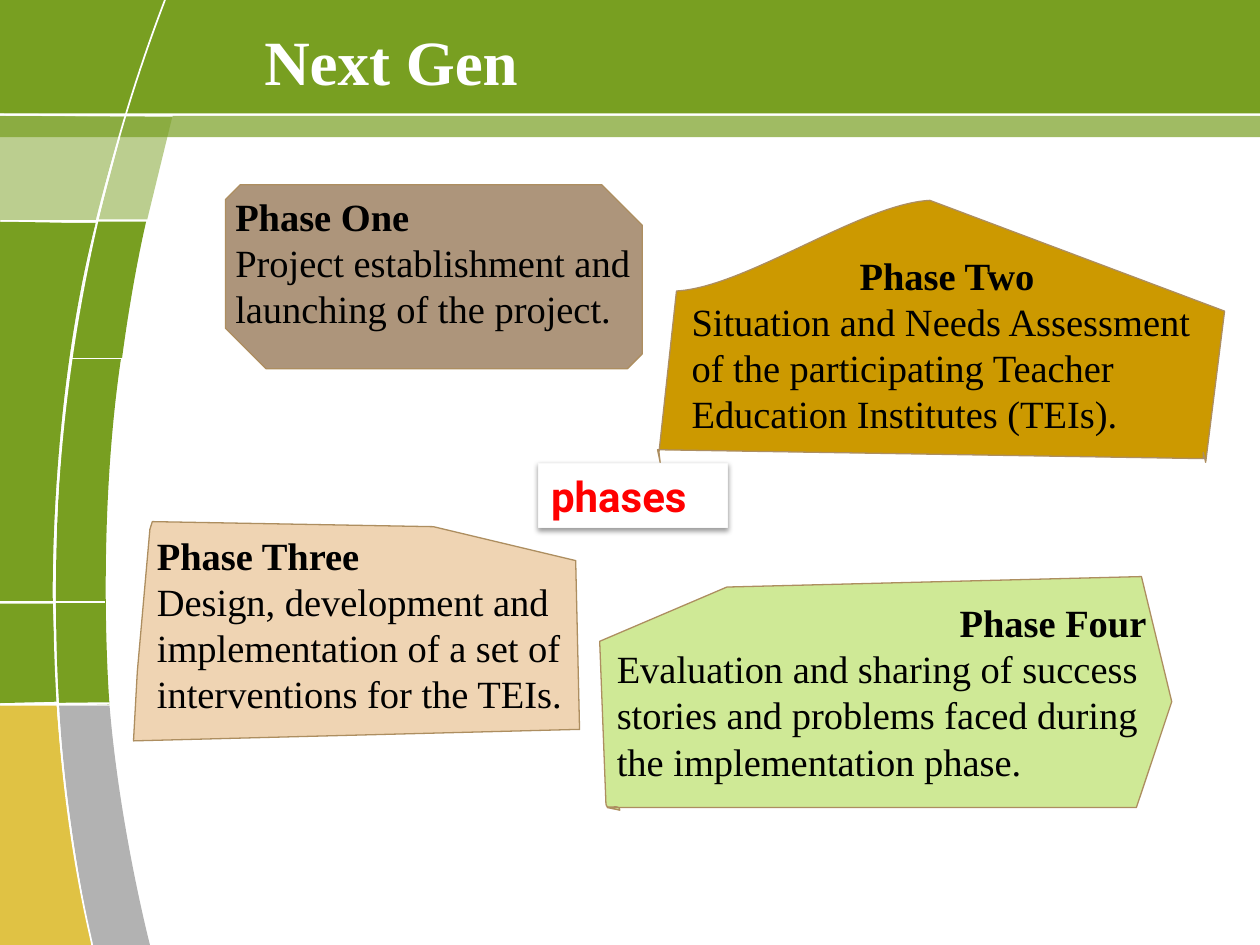
"""Build the "Next Gen" slide with its four project phases."""
from lxml.etree import SubElement
from pptx import Presentation
from pptx.dml.color import RGBColor
from pptx.enum.shapes import MSO_CONNECTOR, MSO_SHAPE
from pptx.enum.text import MSO_ANCHOR, MSO_AUTO_SIZE, PP_ALIGN
from pptx.oxml.ns import qn
from pptx.util import Pt

HUES = {
    "green": "789F21", "gold": "E0C244", "grey": "B2B2B2", "white": "FFFFFF",
    "brown": "AD957B", "amber": "CC9900", "sand": "EFD4B3", "lime": "CFE996",
    "edge": "AD8E60", "pale": "F9F9F9", "red": "FF0000", "black": "000000",
}
SERIF = "Times New Roman"


def paint(shape, fill=None, line=None, width=0.75, alpha=100):
    """Set fill, opacity and outline, without a shadow."""
    shape.shadow.inherit = False
    if fill:
        shape.fill.solid()
        shape.fill.fore_color.rgb = RGBColor.from_string(HUES[fill])
        if alpha < 100:
            tint = shape.fill._xPr.find(qn("a:solidFill"))[0]
            SubElement(tint, qn("a:alpha"), val=str(alpha * 1000))
    else:
        shape.fill.background()
    if line:
        shape.line.color.rgb = RGBColor.from_string(HUES[line])
        shape.line.width = Pt(width)
    else:
        shape.line.fill.background()


def trace(home, steps, close=True):
    """Draw an outline; pairs are corners and sixes are Bezier curves."""
    if close and steps[-1][-2:] != steps[0]:
        steps = steps + steps[:1]
    spots = [(Pt(s[i]), Pt(s[i + 1])) for s in steps for i in range(0, len(s), 2)]
    pen = home.build_freeform(*spots[0], scale=1.0)
    pen.add_line_segments(spots[1:], close=close)
    shape = pen.convert_to_shape()
    legs = iter(list(shape._element.iter(qn("a:lnTo"))))
    for step in steps[1:]:
        leg = next(legs)
        if len(step) == 6:
            leg.tag = qn("a:cubicBezTo")
            for spare in (next(legs), next(legs)):
                leg.append(spare[0])
                spare.getparent().remove(spare)
    return shape


deck = Presentation()
deck.slide_width, deck.slide_height = Pt(720), Pt(540)
slide = deck.slides.add_slide(deck.slide_layouts[5])
shapes = slide.shapes

for top, high, alpha in [(66.2, 12.2, 70), (0, 64.8, 100)]:
    band = shapes.add_shape(MSO_SHAPE.RECTANGLE, 0, Pt(top), Pt(720), Pt(high))
    paint(band, "green", alpha=alpha)

tiles = [
    ("green", 100, [(55.4, 126.7), (55.4, 126.7, 69.8, 126.7, 83.5, 126.7),
                    (74.9, 164.2, 69.8, 204.5, 69.8, 204.5),
                    (69.8, 204.5, 55.4, 204.5, 41, 204.5),
                    (46.1, 164.9, 55.4, 126.7, 55.4, 126.7)]),
    ("green", 100, [(41, 205.2), (54.7, 205.2, 69.1, 205.2, 69.1, 205.2),
                    (54.7, 303.8, 62.6, 402.5, 62.6, 402.5), (33.8, 401.8),
                    (33.8, 401.8, 26.6, 301.7, 41, 205.2)]),
    ("gold", 100, [(0, 403.2), (32.4, 403.2), (32.4, 403.2, 36.7, 473.8, 52.6, 540),
                   (25.9, 540, 0, 540, 0, 540)]),
    ("grey", 100, [(33.8, 403.2), (48.2, 403.2, 62.6, 403.2, 62.6, 403.2),
                   (68.4, 473, 85.7, 540, 85.7, 540), (52.6, 540),
                   (52.6, 540, 37.4, 470.9, 33.8, 403.2)]),
    ("green", 50, [(0, 66.2), (71.3, 67), (71.3, 67, 61.9, 96.5, 54.7, 126),
                   (27.4, 126, 0, 126, 0, 126)]),
    ("green", 50, [(72, 66.2), (98.6, 66.2), (84.2, 125.3), (56.2, 125.3)]),
    ("green", 100, [(0, 126.7), (51.1, 127.4, 26.6, 127.4, 54.7, 127.4),
                    (28.1, 231.1, 30.2, 343.4, 30.2, 343.4), (0, 343.4),
                    (0, 343.4, 0, 126.7, 0, 126.7)]),
    ("green", 100, [(0, 344.9), (30.2, 344.9), (32.4, 401), (0, 401.8)]),
]
for hue, alpha, steps in tiles:
    paint(trace(shapes, steps), hue, alpha=alpha)

for x1, y1, x2, y2 in [(0.7, 402.5, 62.6, 401.8), (0, 65.5, 98.6, 66.2),
                       (0.7, 126, 83.5, 126), (0, 344.2, 59.8, 344.2)]:
    rule = shapes.add_connector(MSO_CONNECTOR.STRAIGHT, Pt(x1), Pt(y1), Pt(x2), Pt(y2))
    rule.line.color.rgb = RGBColor.from_string(HUES["white"])
    rule.line.width = Pt(1)
    SubElement(rule._element.spPr, qn("a:effectLst"))

arc = trace(shapes, [(94.3, 0), (-18.7, 295.2, 54.7, 541.4, 52.6, 540)], close=False)
paint(arc, line="white", width=1)

cards = [
    ("brown", None, (127.4, 106.6, 254.9, 87.1), PP_ALIGN.LEFT, "Phase One",
     "Project establishment and launching of the project."),
    ("amber", [(386.6, 166.3), (426.2, 164.2, 491.8, 116.6, 531.4, 114.5), (699.8, 177.8),
               (689, 264.2), (687.6, 258.5), (687.6, 259.9, 687.6, 260.6, 687.6, 262.1),
               (375.8, 257), (377.3, 264.2), (376.6, 258.5)],
     (388.1, 140.4, 306, 113.8), PP_ALIGN.CENTER, "Phase Two",
     "Situation and Needs Assessment of the participating Teacher Education Institutes (TEIs)."),
    ("sand", [(87.1, 298.1), (247.7, 301), (329, 320.4), (331.2, 416.9), (329, 416.9),
              (76.3, 423.4), (78.5, 383.8), (85.7, 302.4)],
     (82.6, 300.2, 254.9, 113.8), PP_ALIGN.LEFT, "Phase Three",
     "Design, development and implementation of a set of interventions for the TEIs."),
    ("lime", [(415.4, 335.5), (652.3, 329.5), (669.6, 401), (649.4, 461.5), (646.6, 461.5),
              (347, 461.5), (354.2, 463), (354.2, 458.6, 346.3, 463.7, 346.3, 459.4),
              (342.7, 366.5)],
     (345.4, 338.8, 316.8, 113.8), PP_ALIGN.RIGHT, "Phase Four",
     "Evaluation and sharing of success stories and problems faced during "
     "the implementation phase."),
]
for hue, steps, area, align, head, body in cards:
    group = shapes.add_group_shape().shapes
    if steps:
        panel = trace(group, steps)
    else:
        panel = group.add_shape(MSO_SHAPE.SNIP_2_DIAG_RECTANGLE,
                                Pt(128.9), Pt(105.6), Pt(238.1), Pt(105.1))
        panel.adjustments[0], panel.adjustments[1] = 0.08, 0.22
    paint(panel, hue, "edge")
    frame = group.add_textbox(*map(Pt, area)).text_frame
    frame.word_wrap = True
    frame.auto_size = MSO_AUTO_SIZE.SHAPE_TO_FIT_TEXT
    frame.text = f"{head}\n{body}"
    for para, bold, side in zip(frame.paragraphs, (True, False), (align, PP_ALIGN.LEFT)):
        para.alignment = side
        font = para.font
        font.name, font.size, font.bold = SERIF, Pt(22), bold
        font.color.rgb = RGBColor.from_string(HUES["black"])

label = shapes.add_shape(MSO_SHAPE.RECTANGLE, Pt(307.8), Pt(264.7), Pt(108), Pt(36.7))
paint(label, "white", "pale")
glow = SubElement(label._element.spPr.find(qn("a:effectLst")), qn("a:outerShdw"),
                  blurRad=str(Pt(3.1)), dist=str(Pt(1.6)), dir="5400000", rotWithShape="0")
shade = SubElement(glow, qn("a:srgbClr"), val=HUES["black"])
SubElement(shade, qn("a:alpha"), val="38000")
label.text_frame.word_wrap = False

title = shapes.title
title.left, title.top, title.width, title.height = Pt(143.8), Pt(12.2), Pt(509.8), Pt(44.6)
shapes._spTree.append(title._element)

for shape, words, face, size, hue in [(label, "phases", "Roboto", 24, "red"),
                                      (title, "Next Gen", SERIF, 36, "white")]:
    frame = shape.text_frame
    frame.text = words
    frame.vertical_anchor = MSO_ANCHOR.MIDDLE
    frame.auto_size = MSO_AUTO_SIZE.NONE
    para = frame.paragraphs[0]
    para.alignment = PP_ALIGN.LEFT
    font = para.font
    font.name, font.size, font.bold = face, Pt(size), True
    font.color.rgb = RGBColor.from_string(HUES[hue])

deck.save("out.pptx")
